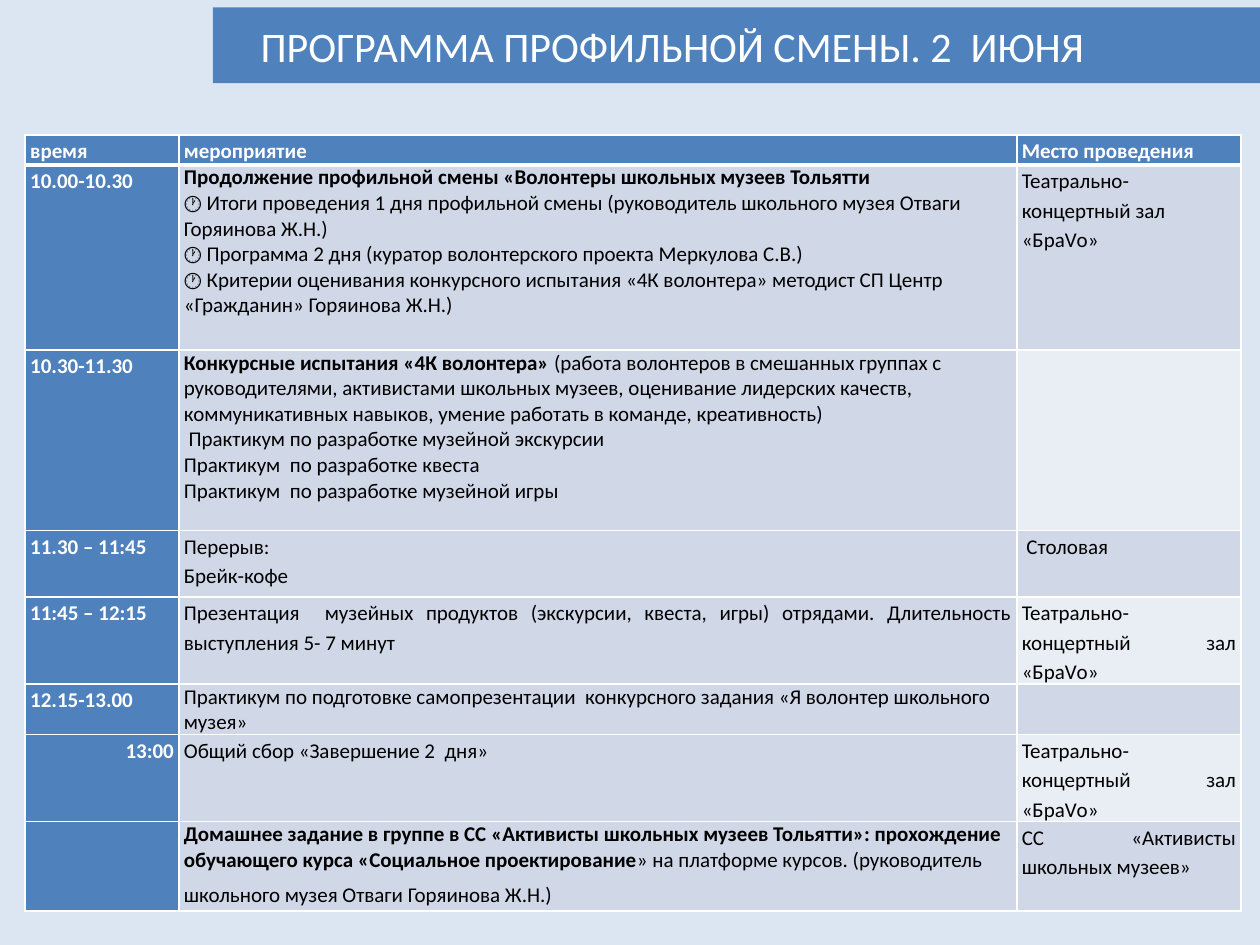
from pptx import Presentation
from pptx.dml.color import RGBColor
from pptx.enum.shapes import MSO_SHAPE
from pptx.enum.text import PP_ALIGN
from pptx.oxml.ns import qn
from pptx.util import Inches, Pt
from lxml.etree import SubElement

COLORS = {"background": "DCE6F2", "accent": "4F81BD", "band": "D0D8E8",
          "light": "E9EDF4", "white": "FFFFFF", "black": "000000"}
FONT = "Calibri"
TITLE = "ПРОГРАММА ПРОФИЛЬНОЙ СМЕНЫ. 2  ИЮНЯ"
HEADINGS = ("время", "мероприятие", "Место проведения")
HALL = "Театрально- концертный зал «БраVо»"
LEFT, RIGHT, JUSTIFY = PP_ALIGN.LEFT, PP_ALIGN.RIGHT, PP_ALIGN.JUSTIFY
WIDE, SINGLE = 1.15, 1.0

# A paragraph is a list of runs: (text, bold) or (text, bold, size).
OPENING = [
    [("Продолжение профильной смены «Волонтеры школьных музеев Тольятти", True)],
    [("🕐 Итоги проведения 1 дня профильной смены (руководитель школьного музея "
      "Отваги Горяинова Ж.Н.)", False)],
    [("🕐 Программа 2 дня (куратор волонтерского проекта Меркулова С.В.)", False)],
    [("🕐 Критерии оценивания конкурсного испытания «4К волонтера» методист СП "
      "Центр «Гражданин» Горяинова Ж.Н.)", False)],
]
CONTEST = [
    [("Конкурсные испытания «4К волонтера» ", True),
     ("(работа волонтеров в смешанных группах с руководителями, активистами "
      "школьных музеев, оценивание лидерских качеств, коммуникативных навыков, "
      "умение работать в команде, креативность)", False)],
    [(" Практикум по разработке музейной экскурсии", False)],
    [("Практикум  по разработке квеста", False)],
    [("Практикум  по разработке музейной игры", False)],
]
BREAK = [[("Перерыв:", False)], [("Брейк-кофе", False)]]
PRESENTATION = [[("Презентация  музейных продуктов (экскурсии, квеста, игры) "
                  "отрядами. Длительность выступления 5- 7 минут", False)]]
PRACTICE = [[("Практикум по подготовке самопрезентации  конкурсного задания "
              "«Я волонтер школьного музея»", False)]]
GATHERING = [[("Общий сбор «Завершение 2  дня»", False)]]
HOMEWORK = [[
    ("Домашнее задание в группе в СС «Активисты школьных музеев Тольятти»: "
     "прохождение обучающего курса «Социальное проектирование", True),
    ("» на платформе курсов. (руководитель школьного музея Отваги "
     "Горяинова Ж.Н.)", False),
    (" ", False, 18),
]]

# time, time alignment, event, event alignment, event spacing, place, place alignment, place fill
PROGRAMME = [
    ("10.00-10.30", LEFT, OPENING, LEFT, SINGLE, HALL, LEFT, "band"),
    ("10.30-11.30", LEFT, CONTEST, LEFT, SINGLE, "", LEFT, "light"),
    ("11.30 – 11:45", LEFT, BREAK, JUSTIFY, WIDE, " Столовая", JUSTIFY, "band"),
    ("11:45 – 12:15", LEFT, PRESENTATION, JUSTIFY, WIDE, HALL, JUSTIFY, "light"),
    ("12.15-13.00", LEFT, PRACTICE, LEFT, SINGLE, "", LEFT, "band"),
    ("13:00", RIGHT, GATHERING, JUSTIFY, WIDE, HALL, JUSTIFY, "light"),
    ("", LEFT, HOMEWORK, LEFT, SINGLE, "СС «Активисты школьных музеев»", JUSTIFY, "band"),
]
COLUMN_WIDTHS = (1.22, 6.65, 1.78)
ROW_HEIGHTS = (0.24, 1.47, 1.43, 0.53, 0.69, 0.4, 0.68, 0.71)


def rgb(name):
    return RGBColor.from_string(COLORS[name])


def style_font(font, size, color, bold=False):
    values = {"name": FONT, "size": Pt(size), "bold": bold}
    for attribute, value in values.items():
        setattr(font, attribute, value)
    font.color.rgb = rgb(color)


def draw_borders(cell, bottom):
    """Give the cell white edges; the bottom one may be thicker (points)."""
    properties = cell._tc.get_or_add_tcPr()
    for side, width in (("L", 1), ("R", 1), ("T", 1), ("B", bottom)):
        line = SubElement(properties, qn(f"a:ln{side}"), w=str(Pt(width)))
        fill = SubElement(line, qn("a:solidFill"))
        SubElement(fill, qn("a:srgbClr"), val=COLORS["white"])


def fill_cell(cell, paragraphs, color, background, align=LEFT, spacing=WIDE, bottom=1):
    margins = {"margin_left": 0.04, "margin_right": 0.04,
               "margin_top": 0, "margin_bottom": 0}
    for attribute, value in margins.items():
        setattr(cell, attribute, Inches(value))
    draw_borders(cell, bottom)
    cell.fill.solid()
    cell.fill.fore_color.rgb = rgb(background)
    frame = cell.text_frame
    for index, runs in enumerate(paragraphs):
        paragraph = frame.add_paragraph() if index else frame.paragraphs[0]
        paragraph.alignment = align
        paragraph.line_spacing = spacing
        style_font(paragraph.font, 12, color)
        for text, bold, *size in runs:
            if text:
                run = paragraph.add_run()
                run.text = text
                style_font(run.font, size[0] if size else 12, color, bold)


def add_title(slide):
    banner = slide.shapes.add_shape(MSO_SHAPE.RECTANGLE, Inches(1.69), Inches(0.06),
                                    Inches(8.31), Inches(0.6))
    banner.shadow.inherit = False
    banner.fill.solid()
    banner.fill.fore_color.rgb = rgb("accent")
    banner.line.fill.background()
    title = slide.shapes.add_textbox(Inches(1.97), Inches(0.11), Inches(6.8), Inches(0.51))
    title.text_frame.word_wrap = False
    run = title.text_frame.paragraphs[0].add_run()
    run.text = TITLE
    style_font(run.font, 24, "white")


def add_programme(slide):
    table = slide.shapes.add_table(
        len(ROW_HEIGHTS), len(COLUMN_WIDTHS), Inches(0.2), Inches(1.07),
        Inches(sum(COLUMN_WIDTHS)), Inches(sum(ROW_HEIGHTS))).table
    for column, width in zip(table.columns, COLUMN_WIDTHS):
        column.width = Inches(width)
    for row, height in zip(table.rows, ROW_HEIGHTS):
        row.height = Inches(height)
    for index, heading in enumerate(HEADINGS):
        fill_cell(table.cell(0, index), [[(heading, True)]], "white", "accent", bottom=3)
    for index, entry in enumerate(PROGRAMME, start=1):
        time, time_align, event, event_align, spacing, place, place_align, place_fill = entry
        fill_cell(table.cell(index, 0), [[(time, True)]], "white", "accent", time_align)
        fill_cell(table.cell(index, 1), event, "black", "band", event_align, spacing)
        fill_cell(table.cell(index, 2), [[(place, False)]], "black", place_fill, place_align)


def main():
    presentation = Presentation()
    presentation.slide_width = Inches(10)
    presentation.slide_height = Inches(7.5)
    slide = presentation.slides.add_slide(presentation.slide_layouts[6])
    slide.background.fill.solid()
    slide.background.fill.fore_color.rgb = rgb("background")
    add_title(slide)
    add_programme(slide)
    presentation.save("out.pptx")


if __name__ == "__main__":
    main()
